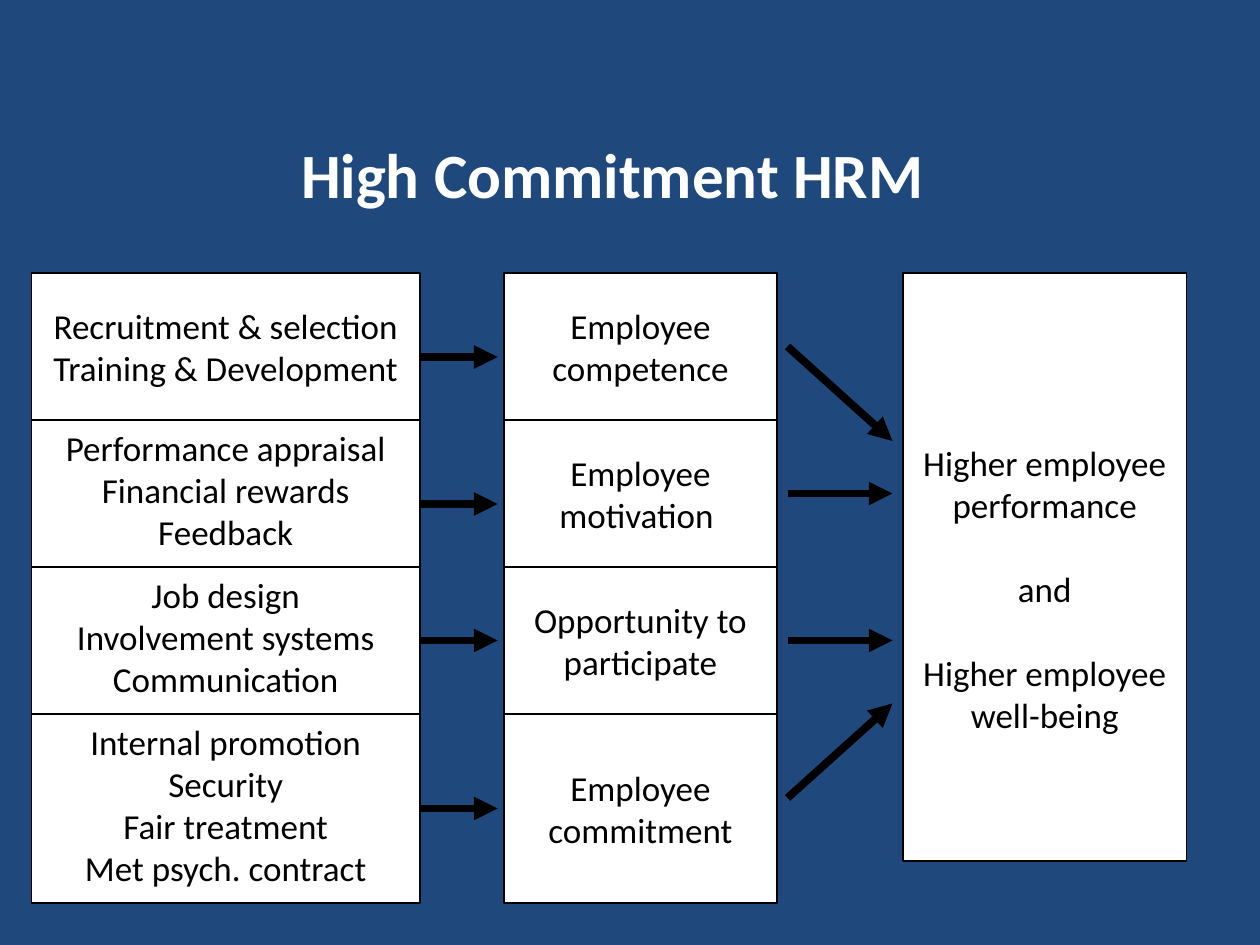
from pptx import Presentation
from pptx.dml.color import RGBColor
from pptx.enum.shapes import MSO_CONNECTOR, MSO_SHAPE
from pptx.enum.text import MSO_ANCHOR, PP_ALIGN
from pptx.oxml.ns import qn
from pptx.util import Inches, Pt
from lxml.etree import SubElement

COLORS = {"background": "1F497D", "box": "FFFFFF", "ink": "000000", "title": "FFFFFF"}
FONT = "Calibri"
UNITS_PER_INCH = 12
TOP = 26
ROW_HEIGHTS = [14, 14, 14, 18]
PRACTICE_COLUMN = (3, 37)
EFFECT_COLUMN = (48, 26)
OUTCOME_COLUMN = (86, 27)

PRACTICES = [
    ["Recruitment & selection", "Training & Development"],
    ["Performance appraisal", "Financial rewards", "Feedback"],
    ["Job design", "Involvement systems", "Communication"],
    ["Internal promotion", "Security", "Fair treatment", "Met psych. contract"],
]
EFFECTS = [
    "Employee competence",
    "Employee motivation ",
    "Opportunity to participate",
    "Employee commitment",
]
OUTCOMES = ["Higher employee performance", "and", "Higher employee well-being"]
PRACTICE_ARROWS = [34, 48, 61, 77]
OUTCOME_ARROWS = [(33, 42), (47, 47), (61, 61), (76, 67)]


def grid(units):
    return Inches(units / UNITS_PER_INCH)


def color(name):
    return RGBColor.from_string(COLORS[name])


def format_paragraph(para, size, color_name, bold=False):
    para.alignment = PP_ALIGN.CENTER
    para.font.name = FONT
    para.font.size = Pt(size)
    para.font.bold = bold
    para.font.color.rgb = color(color_name)


def add_title(page, text):
    title = page.shapes.title
    title.left, title.top, title.width, title.height = map(grid, (8, 9, 102, 15))
    title.text_frame.text = text
    title.text_frame.vertical_anchor = MSO_ANCHOR.MIDDLE
    format_paragraph(title.text_frame.paragraphs[0], 36, "title", bold=True)


def add_box(page, column, top, height, lines, anchor=MSO_ANCHOR.MIDDLE, gap=0):
    left, width = column
    box = page.shapes.add_shape(
        MSO_SHAPE.RECTANGLE, grid(left), grid(top), grid(width), grid(height))
    box.shadow.inherit = False
    box.fill.solid()
    box.fill.fore_color.rgb = color("box")
    box.line.color.rgb = color("ink")
    box.line.width = Pt(0.75)
    frame = box.text_frame
    frame.word_wrap = True
    frame.vertical_anchor = anchor
    frame.margin_top += Pt(gap)
    frame.text = "\n".join(lines)
    for index, para in enumerate(frame.paragraphs):
        format_paragraph(para, 20, "ink")
        para.space_before = Pt(gap if index else 0)


def add_arrow(page, start, end):
    arrow = page.shapes.add_connector(
        MSO_CONNECTOR.STRAIGHT, *map(grid, (*start, *end)))
    arrow.line.color.rgb = color("ink")
    arrow.line.width = Pt(4.5)
    SubElement(arrow.line._get_or_add_ln(), qn("a:tailEnd"), type="triangle")
    SubElement(arrow._element.spPr, qn("a:effectLst"))


def main():
    deck = Presentation()
    deck.slide_width, deck.slide_height = Inches(10), Inches(7.5)
    page = deck.slides.add_slide(deck.slide_layouts[5])
    page.background.fill.solid()
    page.background.fill.fore_color.rgb = color("background")
    add_title(page, "High Commitment HRM ")

    for row, height in enumerate(ROW_HEIGHTS):
        top = TOP + sum(ROW_HEIGHTS[:row])
        anchor = MSO_ANCHOR.TOP if row else MSO_ANCHOR.MIDDLE
        add_box(page, PRACTICE_COLUMN, top, height, PRACTICES[row], anchor)
        add_box(page, EFFECT_COLUMN, top, height, [EFFECTS[row]])
    add_box(page, OUTCOME_COLUMN, TOP, 56, OUTCOMES, gap=24)

    for level in PRACTICE_ARROWS:
        add_arrow(page, (40, level), (47.4, level))
    for start, end in OUTCOME_ARROWS:
        add_arrow(page, (75, start), (85, end))
    deck.save("out.pptx")


if __name__ == "__main__":
    main()
